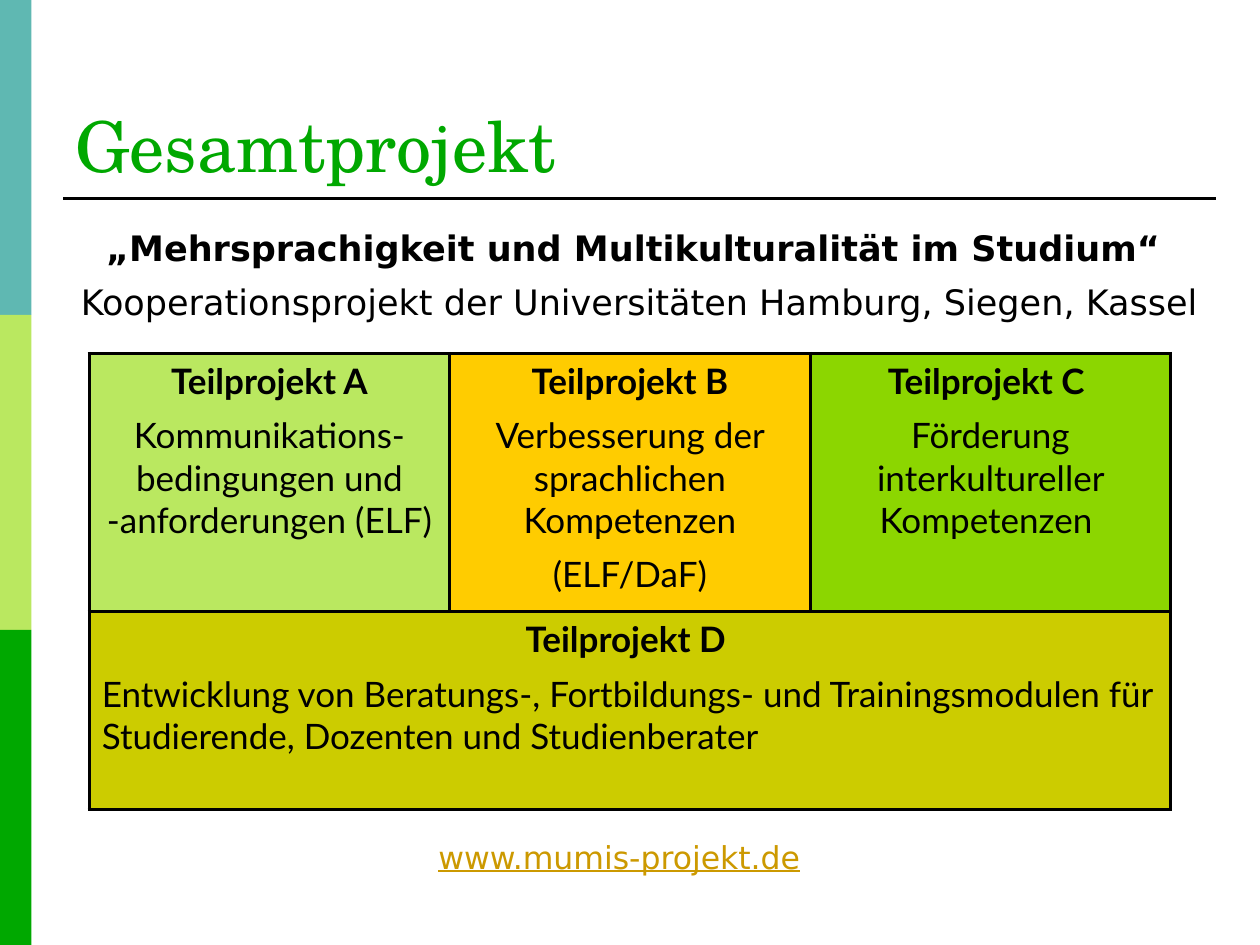
import pptx
import pptx.util
import pptx.dml.color
import pptx.enum.shapes
import pptx.enum.text
import pptx.oxml
import pptx.oxml.ns
from lxml import etree

Pt = pptx.util.Pt
Align = pptx.enum.text.PP_ALIGN
Anchor = pptx.enum.text.MSO_ANCHOR
SANS, LATO, SERIF = "DejaVu Sans", "Lato", "TeX Gyre Schola"


def rgb(code):
    return pptx.dml.color.RGBColor.from_string(code)


def style(para, face, size, color="000000", bold=False, align=Align.LEFT, after=7):
    para.alignment = align
    para.space_after = Pt(after)
    font = para.font
    font.name, font.size, font.bold = face, Pt(size), bold
    font.color.rgb = rgb(color)


def write(frame, lines, face, size):
    """Fill a frame with (text, bold, align) lines."""
    for i, (text, bold, align) in enumerate(lines):
        para = frame.paragraphs[0] if i == 0 else frame.add_paragraph()
        para.text = text
        style(para, face, size, bold=bold, align=align)


def add_bar(slide, box, colors):
    """Stack equal colour blocks in the box."""
    left, top, width, height = box
    step = height / len(colors)
    for i, color in enumerate(colors):
        block = slide.shapes.add_shape(
            pptx.enum.shapes.MSO_SHAPE.RECTANGLE,
            Pt(left), Pt(top + i * step), Pt(width), Pt(step))
        block.shadow.inherit = False
        block.fill.solid()
        block.fill.fore_color.rgb = rgb(color)
        block.line.fill.background()


def add_title(slide, box, text):
    """Place the title, with a rule below it."""
    left, top, width, height = box
    title = slide.shapes.title
    title.left, title.top, title.width, title.height = map(Pt, box)
    frame = title.text_frame
    frame.text = text
    frame.vertical_anchor = Anchor.BOTTOM
    style(frame.paragraphs[0], SERIF, 40, "00A800", after=0)

    y = top + height + 3.6
    rule = slide.shapes.add_connector(
        pptx.enum.shapes.MSO_CONNECTOR.STRAIGHT,
        Pt(left), Pt(y), Pt(left + width), Pt(y))
    rule.line.color.rgb = rgb("000000")
    rule.line.width = Pt(1.5)
    etree.SubElement(rule._element.spPr, pptx.oxml.ns.qn("a:effectLst"))


def add_intro(slide, box, lines):
    frame = slide.shapes.add_textbox(*map(Pt, box)).text_frame
    frame.word_wrap = True
    write(frame, lines, SANS, 20)
    for para in frame.paragraphs:
        props = para._p.get_or_add_pPr()
        props.set("marL", str(Pt(27)))
        props.set("indent", str(-Pt(27)))


def add_edges(cell, color, width):
    props = cell._tc.get_or_add_tcPr()
    for i, side in enumerate("LRTB"):
        props.insert(i, pptx.oxml.parse_xml(
            f'<a:ln{side} {pptx.oxml.ns.nsdecls("a")} w="{Pt(width)}">'
            f'<a:solidFill><a:srgbClr val="{color}"/></a:solidFill></a:ln{side}>'))


def add_grid(slide, box, heights, parts, base):
    """Three parts side by side, with one merged part beneath."""
    table = slide.shapes.add_table(2, len(parts), *map(Pt, box)).table
    table.first_row = table.horz_banding = False
    for row, height in zip(table.rows, heights):
        row.height = Pt(height)
    table.cell(1, 0).merge(table.cell(1, len(parts) - 1))
    for i, (lines, color) in enumerate(parts + [base]):
        cell = table.cell(*divmod(i, len(parts)))
        cell.fill.solid()
        cell.fill.fore_color.rgb = rgb(color)
        write(cell.text_frame, lines, LATO, 20)
    for row in table.rows:
        for cell in row.cells:
            add_edges(cell, "000000", 2.25)


def add_site(slide, box, text):
    frame = slide.shapes.add_textbox(*map(Pt, box)).text_frame
    frame.word_wrap = False
    para = frame.paragraphs[0]
    para.text = text
    para.line_spacing = 0.8
    style(para, SANS, 18, "CC9900")
    para.font.underline = True


def part(head, *body, align=Align.CENTER):
    return [(head, True, Align.CENTER)] + [(text, False, align) for text in body]


def main():
    deck = pptx.Presentation()
    deck.slide_width, deck.slide_height = Pt(720), Pt(540)
    slide = deck.slides.add_slide(deck.slide_layouts[5])

    add_bar(slide, (0, 0, 18, 540), ["5FB8B2", "BAE860", "00A800"])
    add_title(slide, (36, 20, 659, 90), "Gesamtprojekt")
    add_intro(slide, (36, 126, 659, 87), part(
        "„Mehrsprachigkeit und Multikulturalität im Studium“ ",
        "Kooperationsprojekt der Universitäten Hamburg, Siegen, Kassel"))
    add_grid(
        slide, (51, 202, 618, 260.5), (147.5, 113),
        [(part("Teilprojekt A",
               "Kommunikations-bedingungen und -anforderungen (ELF)"), "BAE860"),
         (part("Teilprojekt B", "Verbesserung der sprachlichen Kompetenzen",
               "(ELF/DaF)"), "FFCC00"),
         (part("Teilprojekt C ",
               "Förderung interkultureller Kompetenzen "), "8CD600")],
        (part("Teilprojekt D ",
              "Entwicklung von Beratungs-, Fortbildungs- und Trainingsmodulen "
              "für Studierende, Dozenten und Studienberater",
              align=Align.LEFT), "CCCC00"))
    add_site(slide, (243.5, 479.5, 233, 24.5), "www.mumis-projekt.de")
    deck.save("out.pptx")


if __name__ == "__main__":
    main()
